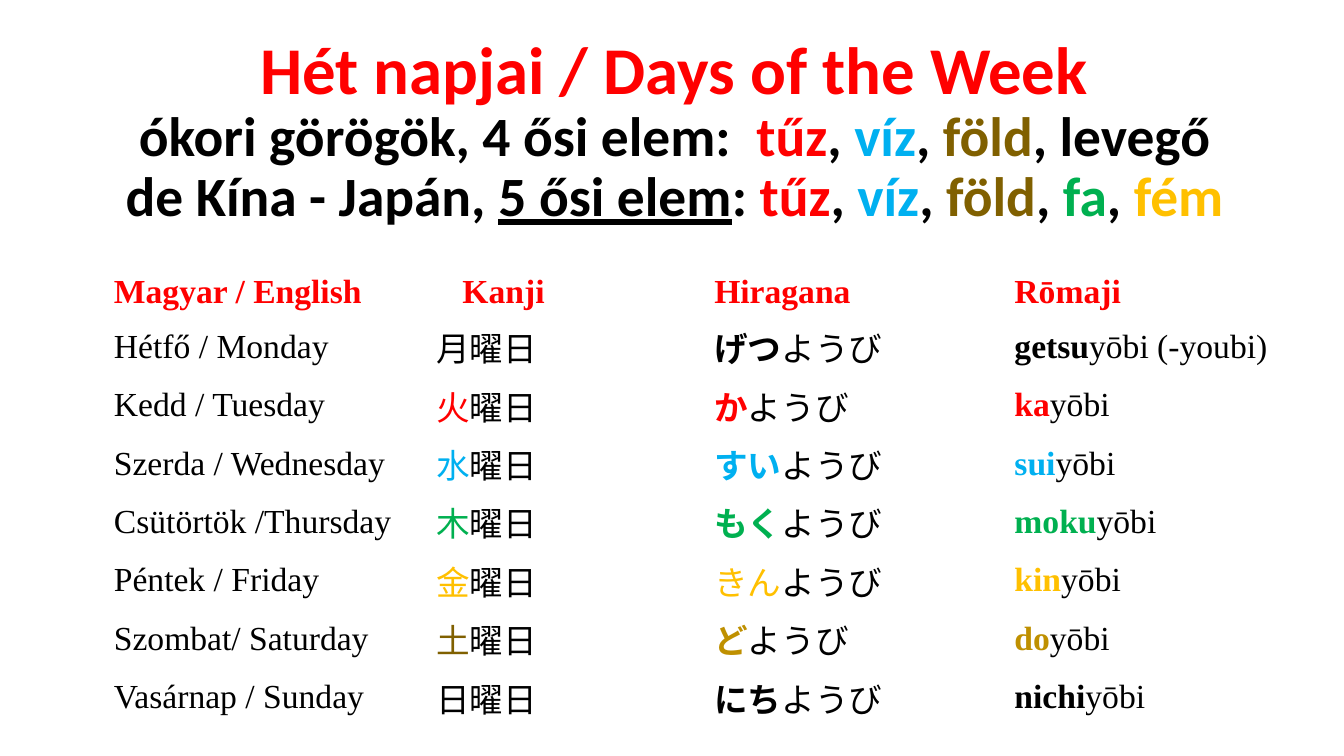
"""Build a slide of the days of the week in Hungarian, English and Japanese."""
from dataclasses import dataclass

import pptx
import pptx.dml.color
import pptx.enum.text
import pptx.util
from lxml import etree
from pptx.oxml.ns import qn

Inches = pptx.util.Inches


@dataclass(frozen=True)
class Theme:
    black: str = "000000"
    red: str = "FF0000"
    blue: str = "00B0F0"
    green: str = "00B050"
    gold: str = "FFC000"
    brown: str = "806000"
    ochre: str = "BF9000"
    heading: str = "Calibri"
    latin: str = "Times New Roman"
    japanese: str = "Noto Sans CJK JP"
    title_size: float = 47.7
    subtitle_size: float = 39.6
    table_size: float = 24


T = Theme()

FIRE, WATER, EARTH = ("tűz", T.red), ("víz", T.blue), ("föld", T.brown)
WOOD, METAL = ("fa", T.green), ("fém", T.gold)
COMMA = (", ", T.black)

HEADERS = ("Magyar / English", "Kanji", "Hiragana", "Rōmaji")
DAYS = (
    ("Hétfő / Monday", "月", "げつ", "getsu", T.black),
    ("Kedd / Tuesday", "火", "か", "ka", T.red),
    ("Szerda / Wednesday", "水", "すい", "sui", T.blue),
    ("Csütörtök /Thursday", "木", "もく", "moku", T.green),
    ("Péntek / Friday", "金", "きん", "kin", T.gold),
    ("Szombat/ Saturday", "土", "ど", "do", T.ochre),
    ("Vasárnap / Sunday", "日", "にち", "nichi", T.black),
)


def add_run(p, text, font, size, color, bold=False, underline=False):
    """Append one formatted run to a paragraph."""
    r = p.add_run()
    r.text = text
    r.font.name = font
    r.font.size = pptx.util.Pt(size)
    r.font.bold = bold
    r.font.underline = underline
    r.font.color.rgb = pptx.dml.color.RGBColor.from_string(color)
    etree.SubElement(r.font._element, qn("a:ea"), typeface=font)


def add_title(slide):
    """Add the heading and the two lines about the ancient elements."""
    sp = slide.shapes.add_textbox(Inches(0.94), Inches(0.43), Inches(11.5), Inches(1.77))
    tf = sp.text_frame
    tf.word_wrap = True
    tf.vertical_anchor = pptx.enum.text.MSO_ANCHOR.MIDDLE
    p = tf.paragraphs[0]
    p.alignment = pptx.enum.text.PP_ALIGN.CENTER
    p.line_spacing = 0.9
    add_run(p, "Hét napjai / Days of the Week", T.heading, T.title_size, T.red, True)
    greek = (("ókori görögök, 4 ősi elem:  ", T.black),
             FIRE, COMMA, WATER, COMMA, EARTH, (", levegő", T.black))
    eastern = (("de Kína - Japán, ", T.black), ("5 ősi elem", T.black, True), (": ", T.black),
               FIRE, COMMA, WATER, COMMA, EARTH, COMMA, WOOD, COMMA, METAL)
    for line in (greek, eastern):
        p.add_line_break()
        for text, color, *underline in line:
            add_run(p, text, T.heading, T.subtitle_size, color, True, bool(underline))


def fill_cell(cell, runs, font, indent=0.1):
    """Write (text, colour, bold) runs into an unfilled table cell."""
    cell.fill.background()
    cell.vertical_anchor = pptx.enum.text.MSO_ANCHOR.MIDDLE
    cell.margin_left = Inches(indent)
    for text, color, bold in runs:
        add_run(cell.text_frame.paragraphs[0], text, font, T.table_size, color, bold)


def add_days_table(slide):
    """Add the table with one row for each day."""
    heights = [0.46] + [0.58] * len(DAYS)
    table = slide.shapes.add_table(len(heights), len(HEADERS), Inches(1.03), Inches(2.65),
                                   Inches(11.91), Inches(sum(heights))).table
    table.first_row = table.horz_banding = False
    for row, height in zip(table.rows, heights):
        row.height = Inches(height)
    for col, header in enumerate(HEADERS):
        indent = 0.58 if header == "Kanji" else 0.1
        fill_cell(table.cell(0, col), [(header, T.red, True)], T.latin, indent)
    for row, (day, kanji, kana, romaji, color) in enumerate(DAYS, 1):
        kanji_color = T.brown if kanji == "土" else color
        ending = "yōbi (-youbi)" if row == 1 else "yōbi"
        fill_cell(table.cell(row, 0), [(day, T.black, False)], T.latin)
        fill_cell(table.cell(row, 1),
                  [(kanji, kanji_color, False), ("曜日", T.black, False)], T.japanese, 0.32)
        fill_cell(table.cell(row, 2),
                  [(kana, color, kana != "きん"), ("ようび", T.black, False)], T.japanese)
        fill_cell(table.cell(row, 3),
                  [(romaji, color, True), (ending, T.black, False)], T.latin)


def main():
    """Create the presentation and save it."""
    prs = pptx.Presentation()
    prs.slide_width, prs.slide_height = Inches(13.33), Inches(7.5)
    slide = prs.slides.add_slide(prs.slide_layouts[6])
    add_title(slide)
    add_days_table(slide)
    prs.save("out.pptx")


if __name__ == "__main__":
    main()
